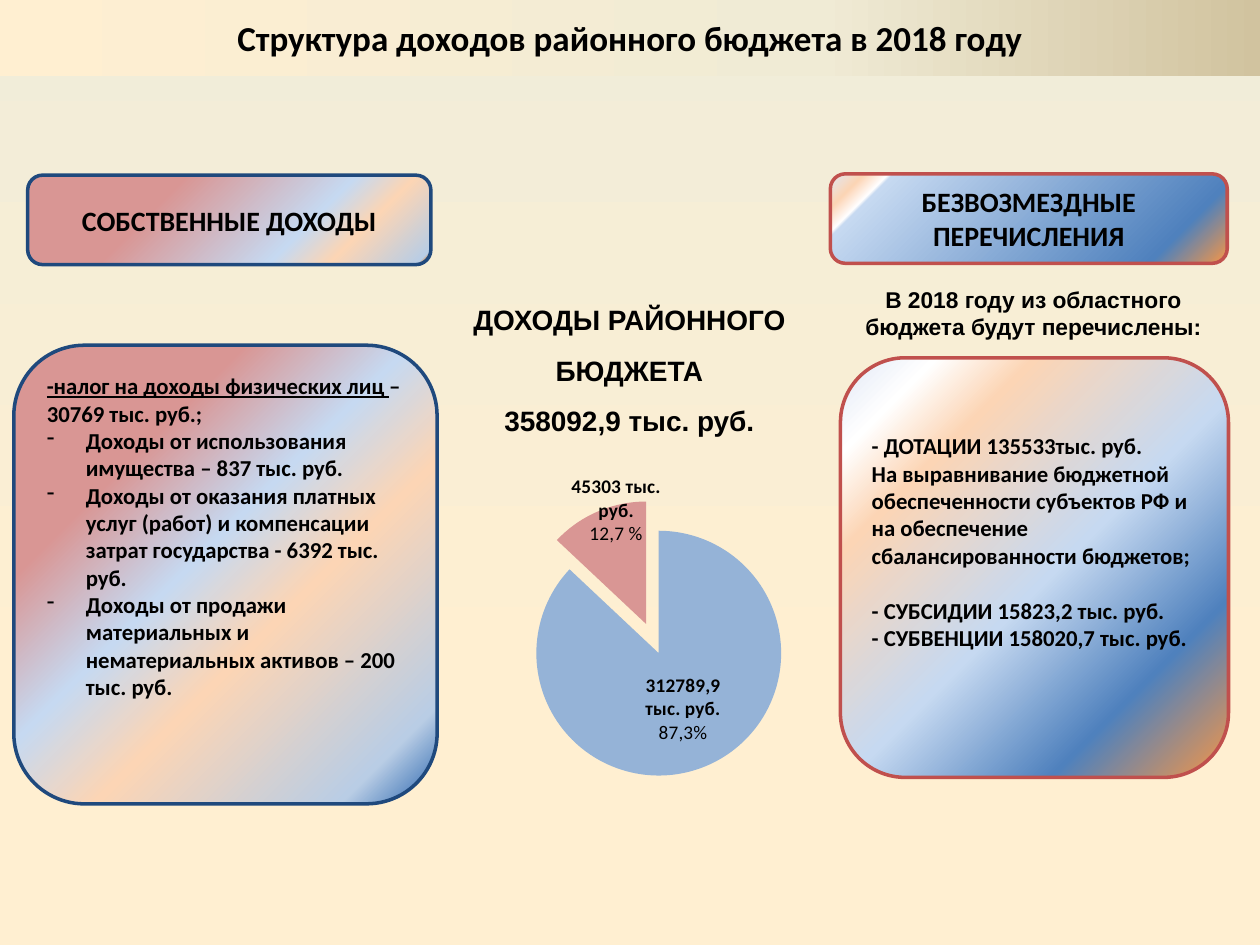
from lxml import etree
from pptx import Presentation
from pptx.chart.data import CategoryChartData
from pptx.dml.color import RGBColor
from pptx.enum.chart import XL_CHART_TYPE, XL_LABEL_POSITION
from pptx.enum.shapes import MSO_SHAPE
from pptx.enum.text import MSO_ANCHOR, PP_ALIGN
from pptx.oxml.ns import qn
from pptx.util import Inches, Pt

ROUND = MSO_SHAPE.ROUNDED_RECTANGLE
PIE = XL_CHART_TYPE.PIE
LABEL_CENTER = XL_LABEL_POSITION.CENTER
TOP, MIDDLE = MSO_ANCHOR.TOP, MSO_ANCHOR.MIDDLE
LEFT, CENTER = PP_ALIGN.LEFT, PP_ALIGN.CENTER

# Content
TITLE = "Структура доходов районного бюджета в 2018 году"
OWN_HEAD = "СОБСТВЕННЫЕ ДОХОДЫ"
OWN_TAX = ("-налог на доходы физических лиц ", "– 30769 тыс. руб.;")
OWN_ITEMS = [
    "Доходы от использования имущества – 837 тыс. руб.",
    "Доходы от оказания платных услуг (работ) и компенсации затрат государства - 6392 тыс. руб.",
    "Доходы от продажи материальных и нематериальных активов – 200 тыс. руб.",
]
GRANT_HEAD = "БЕЗВОЗМЕЗДНЫЕ ПЕРЕЧИСЛЕНИЯ"
GRANT_INTRO = "В 2018 году из областного бюджета будут перечислены:"
GRANTS = [
    "- ДОТАЦИИ 135533тыс. руб.",
    "На выравнивание бюджетной обеспеченности субъектов РФ и на обеспечение "
    "сбалансированности бюджетов;",
    "- СУБСИДИИ 15823,2 тыс. руб.",
    "- СУБВЕНЦИИ 158020,7 тыс. руб.",
]
TOTAL = ["ДОХОДЫ РАЙОННОГО БЮДЖЕТА", "358092,9 тыс. руб."]
SLICES = [  # category, value, colour, label lines (the last one is the share)
    ("1", 87, "95B3D7", ["312789,9", "тыс. руб.", "87,3%"]),
    ("2", 13, "D99694", ["45303 тыс. руб.", "12,7 %"]),
]

# Gradients: position in percent, colour
BACK = [(25, "FFEFD1"), (100, "F1EDD9")]
BAND = [(0, "FFEFD1"), (65, "F0EBD5"), (100, "D1C39F")]
OWN_HEAD_FILL = [(1, "4F81BD"), (2, "F79646"), (3, "B9CDE5"), (21, "FCD5B5"),
                 (33, "C6D9F1"), (68, "D99694")]
OWN_FILL = [(0, "4F81BD"), (3, "4F81BD"), (11, "B9CDE5"), (39, "FCD5B5"),
            (55, "C6D9F1"), (74, "D99694")]
GRANT_HEAD_FILL = [(0, "F79646"), (16, "4F81BD"), (87, "C6D9F1"), (88, "FFFFFF"),
                   (93, "FCD5B5"), (100, "E1E8F5")]
GRANT_FILL = [(0, "F79646"), (22, "4F81BD"), (47, "C6D9F1"), (76, "FCD5B5"),
              (88, "FFFFFF"), (100, "E1E8F5")]
NAVY, RED, BLACK = "1F497D", "C0504D", "000000"


def rgb(value):
    return RGBColor.from_string(value)


def set_gradient(fill, owner, stops, angle):
    """Give a fill any number of stops; the angle runs clockwise."""
    fill.gradient()
    grad = owner.find(".//" + qn("a:gradFill"))
    for child in list(grad):
        grad.remove(child)
    stop_list = etree.SubElement(grad, qn("a:gsLst"))
    for position, color in stops:
        gs = etree.SubElement(stop_list, qn("a:gs"), pos=str(position * 1000))
        etree.SubElement(gs, qn("a:srgbClr"), val=color)
    etree.SubElement(grad, qn("a:lin"), ang=str(angle * 60000), scaled="0")


def format_font(font, size, name="Calibri", bold=True):
    font.size, font.name, font.bold = Pt(size), name, bold
    font.color.rgb = rgb(BLACK)


def write(tf, lines, size, name="Calibri", align=CENTER, anchor=MIDDLE):
    tf.word_wrap = True
    tf.vertical_anchor = anchor
    for i, line in enumerate(lines):
        p = tf.paragraphs[0] if i == 0 else tf.add_paragraph()
        p.alignment = align
        format_font(p.font, size, name)
        for text in (line if isinstance(line, tuple) else (line,)):
            p.add_run().text = text
    return tf.paragraphs


def add_panel(s, box, stops, line):
    sp = s.shapes.add_shape(ROUND, *map(Inches, box))
    sp.shadow.inherit = False
    set_gradient(sp.fill, sp._element, stops, 225)
    sp.line.color.rgb = rgb(line)
    sp.line.width = Pt(2)
    return sp.text_frame


def add_text(s, box, lines, size):
    tf = s.shapes.add_textbox(*map(Inches, box)).text_frame
    return write(tf, lines, size, "Arial", anchor=TOP)


def set_bullet(p, char, indent):
    pPr = p._p.get_or_add_pPr()
    pPr.set("marL", str(Inches(indent)))
    pPr.set("indent", str(-Inches(indent)))
    bullet = etree.Element(qn("a:buChar"), char=char)
    pPr.insert_element_before(bullet, "a:tabLst", "a:defRPr", "a:extLst")


def chart_layout(**values):
    layout = etree.Element(qn("c:layout"))
    manual = etree.SubElement(layout, qn("c:manualLayout"))
    for tag, value in values.items():
        etree.SubElement(manual, qn("c:" + tag), val=str(value))
    return layout


def add_pie(s, box):
    data = CategoryChartData()
    data.categories = [row[0] for row in SLICES]
    data.add_series("Series 1", [row[1] for row in SLICES])
    chart = s.shapes.add_chart(PIE, *map(Inches, box), data).chart
    chart.has_legend = chart.has_title = False
    format_font(chart.font, 11, bold=False)
    plot = chart.plots[0]
    plot.vary_by_categories = False
    series = plot.series[0]
    for i, (_, _, color, lines) in enumerate(SLICES):
        point = series.points[i]
        point.format.fill.solid()
        point.format.fill.fore_color.rgb = rgb(color)
        label = point.data_label
        tf = label.text_frame
        for p in write(tf, lines, 11):
            for r in p.runs:
                format_font(r.font, 11, bold=r.text != lines[-1])
        label.position = LABEL_CENTER

    # Plot area, pulled-apart slices, raised label of the small slice
    root = chart._chartSpace
    area = root.find(".//" + qn("c:plotArea"))
    for old in area.findall(qn("c:layout")):
        area.remove(old)
    area.insert(0, chart_layout(layoutTarget="inner", xMode="edge", yMode="edge",
                                x=0.2, y=0.09, w=0.7, h=0.68))
    explosion = etree.Element(qn("c:explosion"), val="13")
    root.find(".//" + qn("c:dPt")).addprevious(explosion)
    small_label = root.findall(".//" + qn("c:dLbl"))[1]
    small_label.insert(1, chart_layout(x=-0.01, y=-0.14))


prs = Presentation()
prs.slide_width, prs.slide_height = Inches(10), Inches(7.5)
s = prs.slides.add_slide(prs.slide_layouts[5])
set_gradient(s.background.fill, s._element, BACK, 270)

# Title band
title = s.shapes.title
title.left, title.top, title.width, title.height = map(Inches, (0, 0, 10, 0.6))
set_gradient(title.fill, title._element, BAND, 0)
write(title.text_frame, [TITLE], 20)

# Pie and total in the middle
add_pie(s, (2.72, 3.68, 4.47, 3.23))
for p in add_text(s, (3.4, 2.22, 3.19, 1.31), TOTAL, 16):
    p.line_spacing = 1.5

# Grants on the right
tf = add_panel(s, (6.67, 2.84, 3.08, 3.33), GRANT_FILL, RED)
tf.margin_top = Inches(0.44)
grants = write(tf, GRANTS, 13, align=LEFT, anchor=TOP)
grants[2].space_before = Pt(16)
write(add_panel(s, (6.59, 1.38, 3.15, 0.71), GRANT_HEAD_FILL, RED), [GRANT_HEAD], 16)
add_text(s, (6.66, 2.22, 3.08, 0.54), [GRANT_INTRO], 13)

# Own income on the left
write(add_panel(s, (0.22, 1.39, 3.2, 0.71), OWN_HEAD_FILL, NAVY), [OWN_HEAD], 16)
tf = add_panel(s, (0.11, 2.74, 3.36, 3.64), OWN_FILL, NAVY)
tax, *items = write(tf, [OWN_TAX, *OWN_ITEMS], 13, align=LEFT, anchor=TOP)
tax.runs[0].font.underline = True
for p in items:
    set_bullet(p, "-", 0.31)

prs.save("out.pptx")
